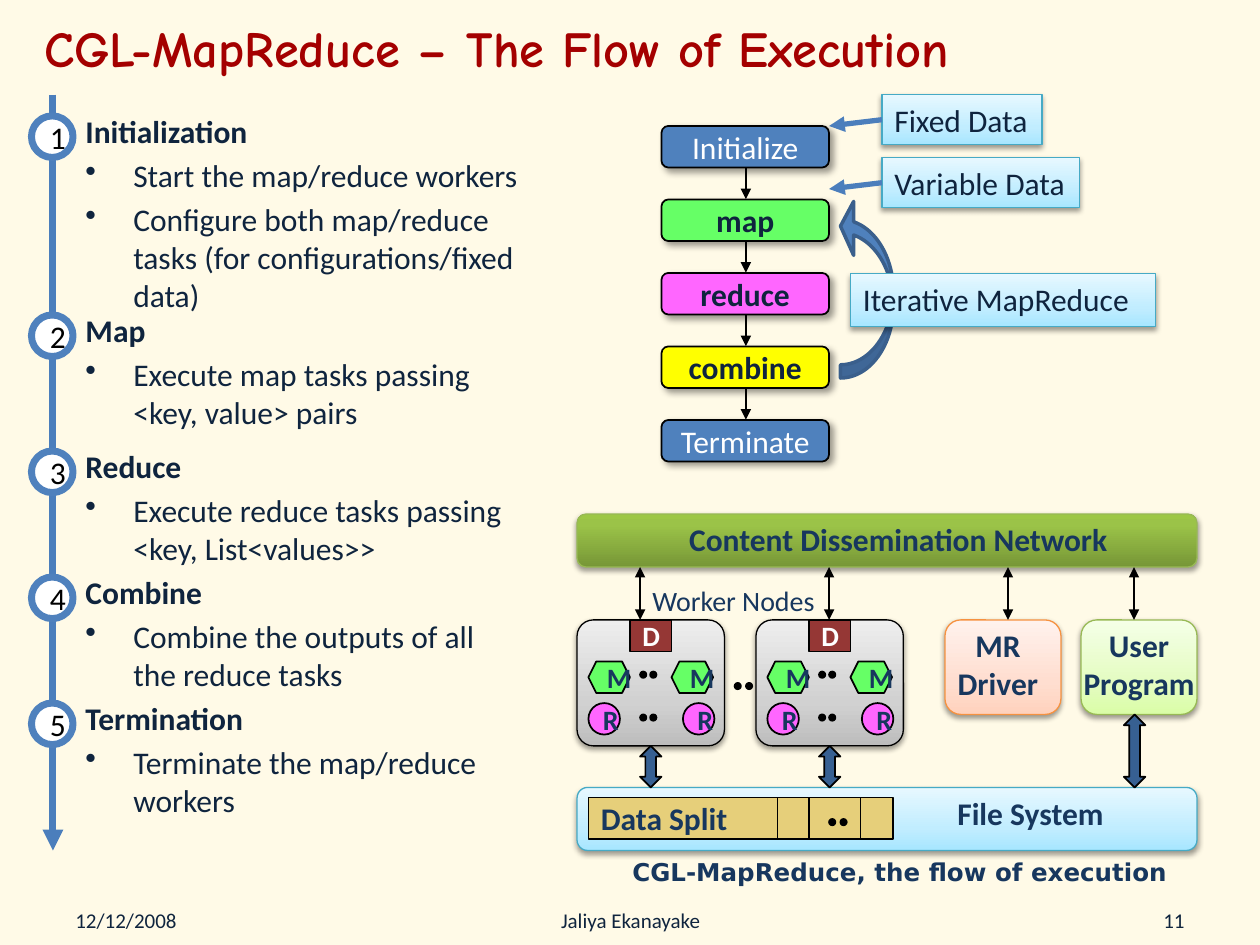
import copy
import pptx
import pptx.dml.color
import pptx.enum.shapes
import pptx.enum.text
import pptx.oxml
import pptx.oxml.ns
import pptx.util
from pptx.util import Inches

RGBColor = pptx.dml.color.RGBColor
SHAPE = pptx.enum.shapes.MSO_SHAPE
ALIGN = pptx.enum.text.PP_ALIGN
ANCHOR = pptx.enum.text.MSO_ANCHOR
qn = pptx.oxml.ns.qn

CREAM = RGBColor(0xFF, 0xFA, 0xE7)
RED = RGBColor(0xA4, 0x00, 0x00)
NAVY = RGBColor(0x0F, 0x24, 0x3E)
INDIGO = RGBColor(0x17, 0x37, 0x5E)
BLACK = RGBColor(0, 0, 0)
WHITE = RGBColor(0xFF, 0xFF, 0xFF)
BLUE = RGBColor(0x4F, 0x81, 0xBD)
ARROW_BLUE = RGBColor(0x4B, 0x7E, 0xBC)
DARK_BLUE = RGBColor(0x3A, 0x5F, 0x8C)
STEEL = RGBColor(0x37, 0x60, 0x92)
GREEN = RGBColor(0x66, 0xFF, 0x66)
PINK = RGBColor(0xFF, 0x66, 0xFF)
YELLOW = RGBColor(0xFF, 0xFF, 0)
GOLD = RGBColor(0xE6, 0xCF, 0x7A)
MAROON = RGBColor(0x95, 0x37, 0x35)
CYAN = RGBColor(0x46, 0xAA, 0xC5)
OLIVE = RGBColor(0x98, 0xB9, 0x55)
ORANGE = RGBColor(0xF6, 0x92, 0x40)

# Gradients run from bottom to top as (position, colour) stops.
SKY = [(0, RGBColor(0xA7, 0xE6, 0xFF)), (0.35, RGBColor(0xC1, 0xED, 0xFF)), (1, RGBColor(0xE7, 0xF8, 0xFF))]
GREY = [(0, RGBColor(0xBD, 0xBD, 0xBD)), (0.35, RGBColor(0xD1, 0xD1, 0xD1)), (1, RGBColor(0xEE, 0xEE, 0xEE))]
LEAF = [(0, RGBColor(0x77, 0x97, 0x37)), (0.8, RGBColor(0x9B, 0xC3, 0x48)), (1, RGBColor(0x9D, 0xC7, 0x46))]
PEACH = [(0, RGBColor(0xFF, 0xD2, 0xBD)), (0.35, RGBColor(0xFF, 0xDE, 0xD0)), (1, RGBColor(0xFF, 0xF2, 0xED))]
LIME = [(0, RGBColor(0xDA, 0xFD, 0xA7)), (0.35, RGBColor(0xE4, 0xFC, 0xC2)), (1, RGBColor(0xF5, 0xFF, 0xE7))]

# Shadows are blur (pt), distance (pt), angle, opacity (%).
SIDE_SHADOW = (4, 3, 45, 40)
DROP_SHADOW = (3.1, 1.6, 90, 38)


def draw(kind, box, fill, line, width=1, shadow=None):
    """Add a preset shape; a list as fill is a gradient."""
    shape = slide.shapes.add_shape(kind, *map(Inches, box))
    shape.shadow.inherit = False
    shape.line.color.rgb = line
    shape.line.width = pptx.util.Pt(width)
    properties = shape._element.spPr
    if isinstance(fill, list):
        shape.fill.gradient()
        shape.fill.gradient_angle = 90
        stops = properties.find(qn("a:gradFill")).find(qn("a:gsLst"))
        stops.append(copy.deepcopy(stops[0]))
        for stop, (position, colour) in zip(shape.fill.gradient_stops, fill):
            stop.position = position
            stop.color.rgb = colour
    else:
        shape.fill.solid()
        shape.fill.fore_color.rgb = fill
    if shadow:
        blur, distance, angle, opacity = shadow
        properties.find(qn("a:effectLst")).append(pptx.oxml.parse_xml(
            f'<a:outerShdw {pptx.oxml.ns.nsdecls("a")} blurRad="{int(blur * 12700)}" '
            f'dist="{int(distance * 12700)}" dir="{angle * 60000}" rotWithShape="0">'
            f'<a:srgbClr val="000000"><a:alpha val="{opacity * 1000}"/></a:srgbClr></a:outerShdw>'))
    return shape


def write(target, text, size=18, colour=INDIGO, bold=True, align=ALIGN.CENTER,
          anchor=ANCHOR.MIDDLE, wrap=True, font="Calibri"):
    """Put text into a shape, or into a new text box if target is a box."""
    if isinstance(target, tuple):
        target = slide.shapes.add_textbox(*map(Inches, target))
    frame = target.text_frame
    frame.text = text
    for name, value in {"word_wrap": wrap, "vertical_anchor": anchor}.items():
        setattr(frame, name, value)
    for paragraph in frame.paragraphs:
        paragraph.alignment = align
        for name, value in {"name": font, "size": pptx.util.Pt(size), "bold": bold}.items():
            setattr(paragraph.runs[0].font, name, value)
        paragraph.runs[0].font.color.rgb = colour
    return frame


deck = pptx.Presentation()
deck.slide_width, deck.slide_height = Inches(10), Inches(7.5)
slide = deck.slides.add_slide(deck.slide_layouts[5])
slide.background.fill.solid()
slide.background.fill.fore_color.rgb = CREAM

title = slide.shapes.title
for name, value in {"left": 0.25, "top": 0, "width": 9, "height": 0.75}.items():
    setattr(title, name, Inches(value))
write(title, "CGL-MapReduce – The Flow of Execution", 28.8, RED, align=ALIGN.LEFT, font="Comic Neue")

for left, width, text, align in [(0.5, 2.33, "12/12/2008", ALIGN.LEFT),
                                 (3.42, 3.17, "Jaliya Ekanayake", ALIGN.CENTER),
                                 (7.17, 2.33, "11", ALIGN.RIGHT)]:
    write((left, 7.1, width, 0.4), text, 12, NAVY, False, align)

# Processing stages and the data that feeds them
stages = [("Initialize", BLUE), ("map", GREEN), ("reduce", PINK), ("combine", YELLOW), ("Terminate", BLUE)]
STAGE_STEP = 7 / 12
for index, (stage, fill) in enumerate(stages):
    block = draw(SHAPE.ROUNDED_RECTANGLE, (5.25, 1 + index * STAGE_STEP, 1.33, 0.33),
                 fill, BLACK, 1, SIDE_SHADOW)
    plain = fill == BLUE
    write(block, stage, colour=WHITE if plain else NAVY, bold=not plain)

loop_arrow = draw(SHAPE.CURVED_LEFT_ARROW, (6.67, 1.58, 0.42, 1.42), BLUE, DARK_BLUE, 2)
loop_arrow.rotation = 180
loop_arrow._element.spPr.xfrm.set("flipH", "1")
for index, value in enumerate([0.25, 1.02, 0.25]):
    loop_arrow.adjustments[index] = value

for box, text, wrap in [((7, 1.25, 1.57, 0.4), "Variable Data", False),
                        ((7, 0.75, 1.27, 0.4), "Fixed Data", False),
                        ((6.75, 2.17, 2.42, 0.42), "Iterative MapReduce", True)]:
    write(draw(SHAPE.RECTANGLE, box, SKY, CYAN, 0.75, DROP_SHADOW), text,
          colour=NAVY, bold=False, align=ALIGN.LEFT, anchor=ANCHOR.TOP, wrap=wrap)

# Architecture: network, file system, driver and user program
for box, fill, line in [((4.58, 4.08, 4.92, 0.42), LEAF, OLIVE),
                        ((4.58, 6.25, 4.92, 0.5), SKY, CYAN),
                        ((7.5, 4.92, 0.92, 0.75), PEACH, ORANGE),
                        ((8.58, 4.92, 0.92, 0.75), LIME, OLIVE)]:
    draw(SHAPE.ROUNDED_RECTANGLE, box, fill, line, 0.75, DROP_SHADOW)
for box, text in [((4.67, 4.08, 4.92, 0.4), "Content Dissemination Network"),
                  ((7.42, 4.92, 1, 0.71), "MR\nDriver"),
                  ((8.5, 4.92, 1.08, 0.71), "User\nProgram")]:
    write(box, text, anchor=ANCHOR.TOP)
write((7.5, 6.25, 1.37, 0.4), "File System", align=ALIGN.LEFT, anchor=ANCHOR.TOP, wrap=False)
write(draw(SHAPE.RECTANGLE, (4.67, 6.33, 2.42, 0.33), GOLD, BLACK), "Data Split", align=ALIGN.LEFT)

# Worker nodes
dots = [(5.83, 5.42), (5.92, 5.42), (6.58, 6.5), (6.67, 6.5)]
for left in (4.58, 6):
    node = draw(SHAPE.ROUNDED_RECTANGLE, (left, 4.92, 1.17, 1), GREY, BLACK, 0.75, DROP_SHADOW)
    node.adjustments[0] = 0.13
    write(draw(SHAPE.RECTANGLE, (left + 0.42, 4.92, 0.33, 0.25), MAROON, BLACK), "D", 16, WHITE)
    for offset in (0.09, 0.75):
        write(draw(SHAPE.HEXAGON, (left + offset, 5.25, 0.33, 0.25), GREEN, BLACK), "M", 16)
    for offset in (0.09, 0.84):
        write(draw(SHAPE.OVAL, (left + offset, 5.58, 0.25, 0.25), PINK, BLACK), "R", 16)
    dots += [(left + offset, top) for offset in (0.5, 0.58) for top in (5.33, 5.67)]
for left, top in dots:
    draw(SHAPE.FLOWCHART_CONNECTOR, (left, top, 0.05, 0.05), BLACK, BLACK)
for left, top, height in [(5.08, 5.92, 0.33), (6.5, 5.92, 0.33), (8.92, 5.67, 0.58)]:
    draw(SHAPE.UP_DOWN_ARROW, (left, top, 0.17, height), STEEL, BLACK)

# Lines and arrows: ends, colour, width, arrowheads
links = [((0.42, 0.75, 0.42, 6.75), ARROW_BLUE, 4, ["tailEnd"]),
         ((7, 0.95, 6.58, 1), ARROW_BLUE, 3, ["tailEnd"]),
         ((7, 1.45, 6.58, 1.5), ARROW_BLUE, 3, ["tailEnd"])]
for index in range(len(stages) - 1):
    bottom = 1.33 + index * STAGE_STEP
    links.append(((5.92, bottom, 5.92, bottom + 0.25), BLACK, 1.5, ["tailEnd"]))
links += [((x, 4.5, x, 4.92), BLACK, 1.5, ["headEnd", "tailEnd"]) for x in (5.08, 6.58, 8, 9)]
links += [((x, 6.33, x, 6.67), BLACK, 1, []) for x in (6.17, 6.42, 6.83)]
for ends, colour, width, heads in links:
    link = slide.shapes.add_connector(pptx.enum.shapes.MSO_CONNECTOR.STRAIGHT, *map(Inches, ends))
    link.line.color.rgb = colour
    link.line.width = pptx.util.Pt(width)
    for head in heads:
        link.line._get_or_add_ln().append(pptx.oxml.parse_xml(
            f'<a:{head} {pptx.oxml.ns.nsdecls("a")} type="triangle"/>'))
    link._element.spPr.append(pptx.oxml.parse_xml(f'<a:effectLst {pptx.oxml.ns.nsdecls("a")}/>'))
write((5.08, 4.58, 1.51, 0.37), "Worker Nodes", 16, bold=False, align=ALIGN.LEFT,
      anchor=ANCHOR.TOP, wrap=False)

# Numbered steps along the timeline
steps = [
    (0.92, 3.83, 1.74, "Initialization\nStart the map/reduce workers\n"
                       "Configure both map/reduce tasks (for configurations/fixed data)"),
    (2.5, 3.58, 1.37, "Map\nExecute map tasks passing <key, value> pairs"),
    (3.58, 3.58, 1.37, "Reduce\nExecute reduce tasks passing <key, List<values>>"),
    (4.58, 3.58, 1.37, "Combine\nCombine the outputs of all the reduce tasks"),
    (5.58, 3.58, 1.37, "Termination\nTerminate the map/reduce workers"),
]
for number, (top, width, height, text) in enumerate(steps, 1):
    write(draw(SHAPE.OVAL, (0.25, top, 0.33, 0.33), WHITE, BLUE, 4), str(number), colour=BLACK, bold=False)
    frame = write((0.58, top - 0.08, width, height), text, colour=NAVY, align=ALIGN.LEFT, anchor=ANCHOR.TOP)
    for item in frame.paragraphs[1:]:
        item.runs[0].font.bold = False
        item.space_before = pptx.util.Pt(3.6)
        layout = item._p.get_or_add_pPr()
        layout.set("marL", str(Inches(0.38)))
        layout.set("indent", str(-Inches(0.38)))
        layout.append(pptx.oxml.parse_xml(f'<a:buChar {pptx.oxml.ns.nsdecls("a")} char="•"/>'))

write((4.92, 6.75, 4.5, 0.34), "CGL-MapReduce, the flow of execution", 14,
      align=ALIGN.LEFT, anchor=ANCHOR.TOP, font="DejaVu Sans")

deck.save("out.pptx")
